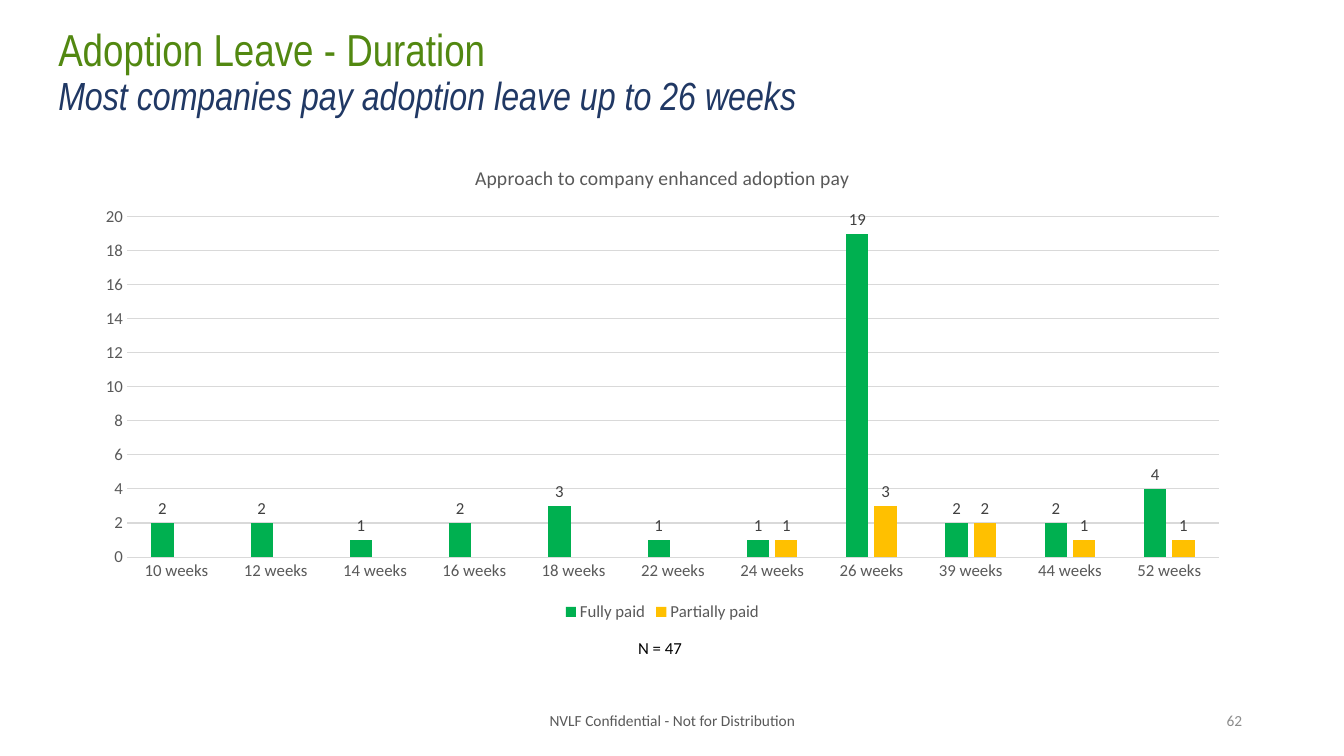
import pptx
import pptx.chart.data
import pptx.dml.color
import pptx.enum.chart
import pptx.enum.text
import pptx.util
from pptx.util import Inches

COLORS = {
    "title": "528811",
    "subtitle": "203864",
    "text": "595959",
    "number": "8C8C8C",
    "label": "404040",
    "grid": "D9D9D9",
    "black": "000000",
    "Fully paid": "00B050",
    "Partially paid": "FFC000",
}
ALIGN = pptx.enum.text.PP_ALIGN
ANCHOR = pptx.enum.text.MSO_ANCHOR


def style_font(font, size, color, name="Calibri"):
    font.size = pptx.util.Pt(size)
    font.name = name
    font.bold = False
    font.color.rgb = pptx.dml.color.RGBColor.from_string(COLORS[color])


def add_text_box(left, top, width, height, anchor, align):
    """Add a wrapping text box and return its first paragraph."""
    box = slide.shapes.add_textbox(Inches(left), Inches(top), Inches(width), Inches(height))
    box.text_frame.word_wrap = True
    box.text_frame.vertical_anchor = anchor
    para = box.text_frame.paragraphs[0]
    para.alignment = align
    return para


deck = pptx.Presentation()
deck.slide_width = Inches(13.33)
deck.slide_height = Inches(7.5)
slide = deck.slides.add_slide(deck.slide_layouts[6])

# Title and subtitle
para = add_text_box(0.48, 0, 11.5, 1.45, ANCHOR.MIDDLE, ALIGN.LEFT)
para.line_spacing = 0.9
span = para.add_run()
span.text = "Adoption Leave - Duration"
style_font(span.font, 32, "title", "Arial Narrow")
para.add_line_break()
span = para.add_run()
span.text = "Most companies pay adoption leave up to 26 weeks"
style_font(span.font, 28, "subtitle", "Arial Narrow")
span.font.italic = True

# Chart
weeks = [10, 12, 14, 16, 18, 22, 24, 26, 39, 44, 52]
chart_data = pptx.chart.data.CategoryChartData()
chart_data.categories = [f"{count} weeks" for count in weeks]
chart_data.add_series("Fully paid", [2, 2, 1, 2, 3, 1, 1, 19, 2, 2, 4])
chart_data.add_series("Partially paid", [None] * 6 + [1, 3, 2, 1, 1])
chart = slide.shapes.add_chart(
    pptx.enum.chart.XL_CHART_TYPE.COLUMN_CLUSTERED,
    Inches(0.82), Inches(1.45), Inches(11.5), Inches(4.76), chart_data,
).chart
style_font(chart.font, 12, "black")

chart.has_title = True
span = chart.chart_title.text_frame.paragraphs[0].add_run()
span.text = "Approach to company enhanced adoption pay"
style_font(span.font, 14, "text")

chart.has_legend = True
chart.legend.position = pptx.enum.chart.XL_LEGEND_POSITION.BOTTOM
chart.legend.include_in_layout = False
style_font(chart.legend.font, 12, "text")

grid_color = pptx.dml.color.RGBColor.from_string(COLORS["grid"])
for axis in (chart.category_axis, chart.value_axis):
    axis.major_tick_mark = pptx.enum.chart.XL_TICK_MARK.NONE
    axis.minor_tick_mark = pptx.enum.chart.XL_TICK_MARK.NONE
    style_font(axis.tick_labels.font, 12, "text")
chart.value_axis.minimum_scale = 0
chart.value_axis.maximum_scale = 20
chart.value_axis.major_unit = 2
chart.value_axis.format.line.fill.background()
for line in (chart.category_axis.format.line, chart.value_axis.major_gridlines.format.line):
    line.color.rgb = grid_color
    line.width = pptx.util.Pt(0.75)

plot = chart.plots[0]
plot.vary_by_categories = False
plot.gap_width = 219
plot.overlap = -27
for series in plot.series:
    series.format.fill.solid()
    series.format.fill.fore_color.rgb = pptx.dml.color.RGBColor.from_string(COLORS[series.name])
    labels = series.data_labels
    labels.show_value = True
    labels.position = pptx.enum.chart.XL_LABEL_POSITION.OUTSIDE_END
    style_font(labels.font, 12, "label")

# Sample size, footer and slide number
for text, place, anchor, align, size, color in [
    ("N = 47", (6.23, 6.28, 0.78, 0.3), ANCHOR.TOP, ALIGN.LEFT, 12, "black"),
    ("NVLF Confidential - Not for Distribution", (4.42, 6.95, 4.5, 0.4),
     ANCHOR.MIDDLE, ALIGN.CENTER, 11, "text"),
    ("62", (9.42, 6.95, 3, 0.4), ANCHOR.MIDDLE, ALIGN.RIGHT, 11, "number"),
]:
    span = add_text_box(*place, anchor, align).add_run()
    span.text = text
    style_font(span.font, size, color)

deck.save("out.pptx")
